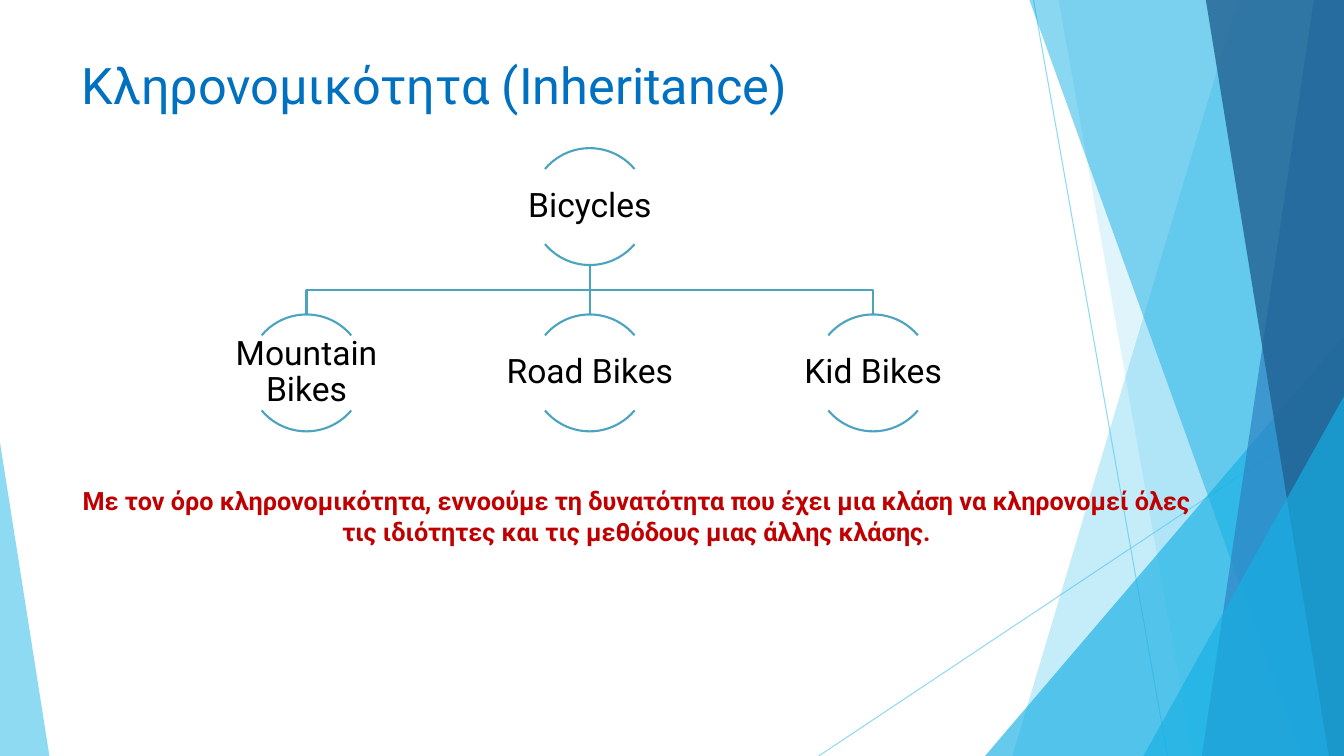
from pptx import Presentation
from pptx.dml.color import RGBColor
from pptx.enum.shapes import MSO_CONNECTOR, MSO_SHAPE
from pptx.enum.text import MSO_ANCHOR, PP_ALIGN
from pptx.oxml.ns import qn
from pptx.util import Inches, Pt
from lxml.etree import SubElement

FONT = "Roboto"
SKY = RGBColor(0x5F, 0xCB, 0xEF)
CYAN = RGBColor(0x17, 0xB0, 0xE4)
BLUE = RGBColor(0x2E, 0x83, 0xC3)
NAVY = RGBColor(0x22, 0x62, 0x92)
TEAL = RGBColor(0x4C, 0xA3, 0xBF)
TITLE_BLUE = RGBColor(0x00, 0x70, 0xC0)
RED = RGBColor(0xC0, 0x00, 0x00)
BLACK = RGBColor(0, 0, 0)

WIDTH, HEIGHT = 13.33, 7.5
TITLE = "Κληρονομικότητα (Inheritance)"
PARENT = "Bicycles"
CHILDREN = ["Mountain Bikes", "Road Bikes", "Kid Bikes"]
DEFINITION = (
    "Με τον όρο κληρονομικότητα, εννοούμε τη δυνατότητα που έχει μια κλάση "
    "να κληρονομεί όλες τις ιδιότητες και τις μεθόδους μιας άλλης κλάσης."
)

# Decoration: thin lines as start and end points
THIN_LINES = [((10.25, 0), (11.58, HEIGHT)), ((WIDTH, 4.03), (8.12, HEIGHT))]
# Bands reach the right edge: top left x, bottom left x, colour, opacity %
# Triangles: left, top, width, apex position, colour, opacity %
DECORATION = [
    ("band", 12.28, 10.04, SKY, 36),
    ("band", 10.5, 11.83, SKY, 20),
    ("triangle", 9.77, 3.33, 3.56, 1, CYAN, 66),
    ("band", 10.21, 12.91, CYAN, 50),
    ("band", 13.03, 11.92, BLUE, 70),
    ("band", 11.96, 13.18, NAVY, 80),
    ("triangle", 11.34, 3.93, 1.99, 1, CYAN, 66),
    ("triangle", 0, 4.39, 0.49, 0, SKY, 70),
]

# Diagram geometry
CENTER_X, COLUMN_STEP = 5.85, 2.81
PARENT_TOP, CHILD_TOP = 1.47, 3.12
CIRCLE = 1.16
LABEL_WIDTH, LABEL_HEIGHT = 2.32, 0.74
ARC_SPANS = [(132, 192), (24, 84)]  # upper and lower arcs, in units of 5/3 degree


def set_opacity(color_format, percent):
    color = color_format._xFill.find(qn("a:srgbClr"))
    SubElement(color, qn("a:alpha"), val=str(percent * 1000))


def paint(shape, color, opacity):
    shape.shadow.inherit = False
    shape.fill.solid()
    shape.fill.fore_color.rgb = color
    set_opacity(shape.fill.fore_color, opacity)
    shape.line.fill.background()


def outline(shape):
    shape.shadow.inherit = False
    shape.fill.background()
    shape.line.color.rgb = TEAL
    shape.line.width = Pt(1.5)


def add_line(page, start, end, color, width):
    line = page.shapes.add_connector(
        MSO_CONNECTOR.STRAIGHT, *[Inches(value) for value in start + end])
    line.line.color.rgb = color
    line.line.width = Pt(width)
    SubElement(line._element.spPr, qn("a:effectLst"))
    return line


def add_outline(page, points, close):
    points = [(Inches(x), Inches(y)) for x, y in points]
    builder = page.shapes.build_freeform(*points[0], scale=1.0)
    builder.add_line_segments(points[1:], close=close)
    return builder.convert_to_shape()


def write(box, text, size, color, bold=False, align=PP_ALIGN.LEFT,
          anchor=MSO_ANCHOR.TOP, margin=None, spacing=None):
    frame = box.text_frame
    frame.word_wrap = True
    frame.vertical_anchor = anchor
    if margin is not None:
        frame.margin_left = frame.margin_right = Inches(margin)
        frame.margin_top = frame.margin_bottom = Inches(margin)
    para = frame.paragraphs[0]
    para.alignment = align
    if spacing is not None:
        para.line_spacing = spacing
    span = para.add_run()
    span.text = text
    span.font.name = FONT
    span.font.size = Pt(size)
    span.font.bold = bold
    span.font.color.rgb = color


def add_decoration(page):
    for start, end in THIN_LINES:
        line = add_line(page, start, end, SKY, 0.75)
        set_opacity(line.line.color, 70)
    for kind, *geometry, color, opacity in DECORATION:
        if kind == "band":
            top_x, bottom_x = geometry
            shape = add_outline(page, [(top_x, 0), (WIDTH, 0), (WIDTH, HEIGHT),
                                       (bottom_x, HEIGHT)], close=True)
        else:
            left, top, width, apex = geometry
            shape = page.shapes.add_shape(
                MSO_SHAPE.ISOSCELES_TRIANGLE, Inches(left), Inches(top),
                Inches(width), Inches(HEIGHT - top))
            shape.adjustments[0] = apex
        paint(shape, color, opacity)


def add_node(page, text, center_x, top):
    """Draw a label between an upper and a lower arc."""
    for span in ARC_SPANS:
        arc = page.shapes.add_shape(
            MSO_SHAPE.ARC, Inches(center_x - CIRCLE / 2), Inches(top),
            Inches(CIRCLE), Inches(CIRCLE))
        arc.adjustments[0], arc.adjustments[1] = span
        outline(arc)
    label = page.shapes.add_textbox(
        Inches(center_x - LABEL_WIDTH / 2),
        Inches(top + (CIRCLE - LABEL_HEIGHT) / 2),
        Inches(LABEL_WIDTH), Inches(LABEL_HEIGHT))
    write(label, text, 24, BLACK, align=PP_ALIGN.CENTER,
          anchor=MSO_ANCHOR.MIDDLE, margin=0.02, spacing=0.9)


def add_branch(page, child_x):
    """Join the parent's lower arc to the top of a child."""
    start = (CENTER_X, PARENT_TOP + CIRCLE)
    end = (child_x, CHILD_TOP)
    if child_x == CENTER_X:
        add_line(page, start, end, TEAL, 1.5)
        return
    middle = (start[1] + end[1]) / 2
    outline(add_outline(page, [start, (CENTER_X, middle), (child_x, middle), end],
                        close=False))


def main():
    deck = Presentation()
    deck.slide_width, deck.slide_height = Inches(WIDTH), Inches(HEIGHT)
    page = deck.slides.add_slide(deck.slide_layouts[5])
    add_decoration(page)

    title = page.shapes.title
    title.left, title.top = Inches(0.71), Inches(0.49)
    title.width, title.height = Inches(10.29), Inches(0.86)
    write(title, TITLE, 36, TITLE_BLUE)

    child_centers = [CENTER_X + (index - 1) * COLUMN_STEP
                     for index in range(len(CHILDREN))]
    for child_x in child_centers:
        add_branch(page, child_x)
    add_node(page, PARENT, CENTER_X, PARENT_TOP)
    for text, child_x in zip(CHILDREN, child_centers):
        add_node(page, text, child_x, CHILD_TOP)

    definition = page.shapes.add_textbox(
        Inches(0.58), Inches(4.77), Inches(11.47), Inches(0.71))
    write(definition, DEFINITION, 18, RED, bold=True, align=PP_ALIGN.CENTER)

    deck.save("out.pptx")


if __name__ == "__main__":
    main()
